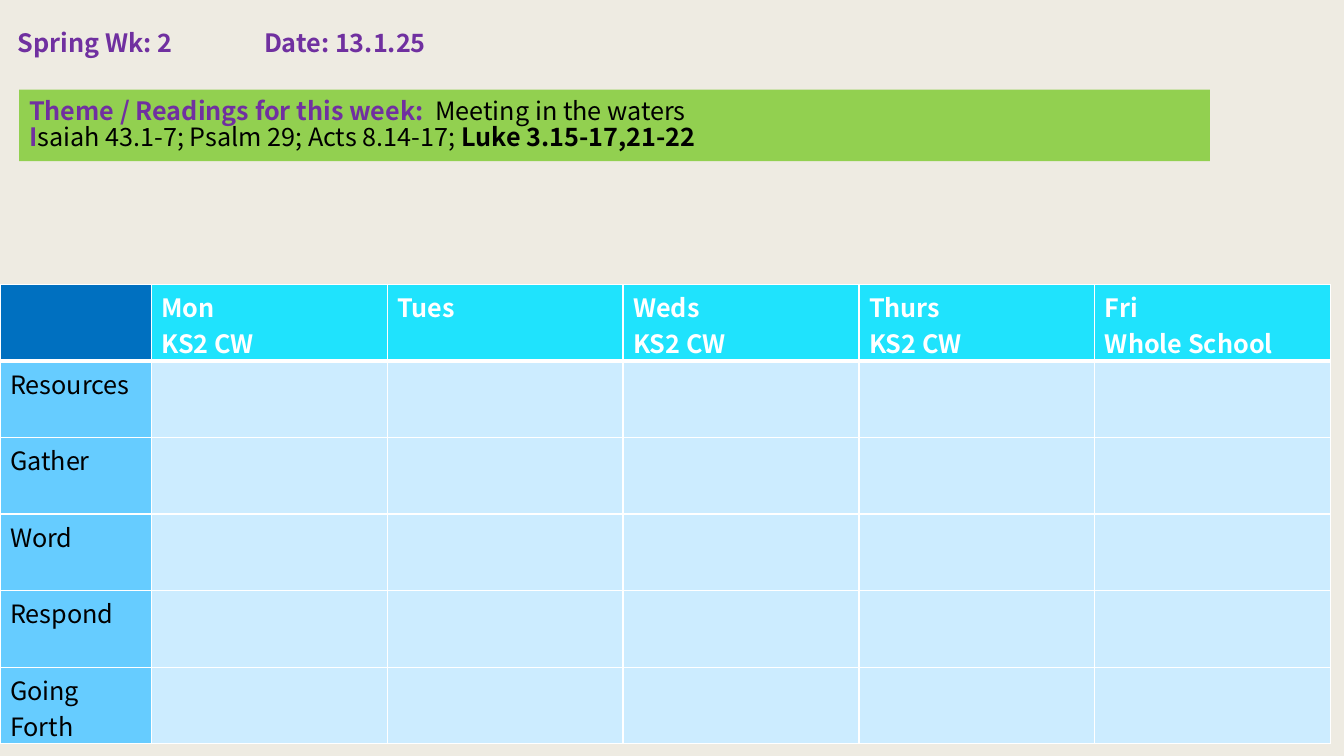
import dataclasses
import typing

import lxml.etree
import pptx
import pptx.dml.color
import pptx.enum.shapes
import pptx.enum.text
import pptx.oxml.ns
import pptx.util

COLOURS = {
    "background": "EEEBE2", "purple": "7030A0", "black": "000000", "white": "FFFFFF",
    "theme": "92D050", "corner": "0070C0", "day": "1FE3FD",
    "stage": "66CCFF", "blank": "CCECFF",
}
FONT = "Noto Sans CJK JP"
SLIDE_WIDTH, SLIDE_HEIGHT = pptx.util.Inches(13.33), pptx.util.Inches(7.5)
GRID_COLUMNS, GRID_ROWS = 1333, 750
LINE_SPACING = 0.85

DAYS = ["Mon\nKS2 CW", "Tues", "Weds\nKS2 CW", "Thurs\nKS2 CW", "Fri\nWhole School"]
STAGES = ["Resources", "Gather", "Word", "Respond", "Going Forth"]
STAGE_COLUMNS, DAY_COLUMNS, TABLE_ROW = 150, 234, 76


@dataclasses.dataclass(frozen=True)
class Region:
    """A rectangle in grid columns and rows."""
    left: int
    top: int
    width: int
    height: int

    def box(self) -> tuple[int, int, int, int]:
        return (across(self.left), down(self.top), across(self.width), down(self.height))


@dataclasses.dataclass(frozen=True)
class Run:
    text: str
    colour: str = "black"
    bold: bool = False


@dataclasses.dataclass(frozen=True)
class Line:
    runs: list[Run]
    tab: int = 0


@dataclasses.dataclass(frozen=True)
class Banner:
    region: Region
    lines: list[Line]
    fill: str = ""


BANNERS = [
    Banner(Region(8, 27, 1298, 40),
           [Line([Run("Spring Wk: 2\tDate: 13.1.25", "purple", True)], tab=244)]),
    Banner(Region(19, 89, 1181, 71), [
        Line([Run("Theme / Readings for this week:\t", "purple", True),
              Run("Meeting in the waters")], tab=403),
        Line([Run("I", "purple", True),
              Run("saiah 43.1-7; Psalm 29; Acts 8.14-17; "),
              Run("Luke 3.15-17,21-22", bold=True)]),
    ], fill="theme"),
]
TABLE = Region(0, 282, STAGE_COLUMNS + DAY_COLUMNS * len(DAYS),
               TABLE_ROW * (len(STAGES) + 1))


def across(columns: int) -> int:
    return round(SLIDE_WIDTH * columns / GRID_COLUMNS)


def down(rows: int) -> int:
    return round(SLIDE_HEIGHT * rows / GRID_ROWS)


def rgb(name: str) -> pptx.dml.color.RGBColor:
    return pptx.dml.color.RGBColor.from_string(COLOURS[name])


def paint(fill: typing.Any, colour: str) -> None:
    fill.solid()
    fill.fore_color.rgb = rgb(colour)


def style_font(font: typing.Any, colour: str, bold: bool) -> None:
    font.name, font.size, font.bold = FONT, pptx.util.Pt(18), bold
    font.color.rgb = rgb(colour)


def add_child(parent: typing.Any, tag: str, **attributes: str) -> typing.Any:
    return lxml.etree.SubElement(parent, pptx.oxml.ns.qn(tag), attributes)


def write_line(paragraph: typing.Any, line: Line) -> None:
    if line.tab:
        tabs = add_child(paragraph._p.get_or_add_pPr(), "a:tabLst")
        add_child(tabs, "a:tab", pos=str(across(line.tab)), algn="l")
    paragraph.line_spacing = LINE_SPACING
    paragraph.alignment = pptx.enum.text.PP_ALIGN.LEFT
    for part in line.runs:
        run = paragraph.add_run()
        run.text = part.text
        style_font(run.font, part.colour, part.bold)


def draw_banner(slide: typing.Any, banner: Banner) -> None:
    if banner.fill:
        shape = slide.shapes.add_shape(
            pptx.enum.shapes.MSO_SHAPE.RECTANGLE, *banner.region.box())
        shape.shadow.inherit = False
        paint(shape.fill, banner.fill)
        shape.line.fill.background()
    else:
        shape = slide.shapes.add_textbox(*banner.region.box())
    frame = shape.text_frame
    frame.word_wrap = True
    frame.auto_size = pptx.enum.text.MSO_AUTO_SIZE.SHAPE_TO_FIT_TEXT
    for index, line in enumerate(banner.lines):
        write_line(frame.add_paragraph() if index else frame.paragraphs[0], line)


def draw_cell(cell: typing.Any, text: str, fill: str, header: bool) -> None:
    cell.margin_top, cell.margin_bottom = pptx.util.Inches(0.04), 0
    properties = cell._tc.get_or_add_tcPr()
    for side in "LRTB":
        points = 3 if header and side == "B" else 1
        border = add_child(properties, f"a:ln{side}", w=str(pptx.util.Pt(points)))
        add_child(add_child(border, "a:solidFill"), "a:srgbClr", val=COLOURS["white"])
    paint(cell.fill, fill)
    cell.text_frame.text = text
    for paragraph in cell.text_frame.paragraphs:
        style_font(paragraph.font, "white" if header else "black", header)
        for run in paragraph.runs:
            style_font(run.font, "white" if header else "black", header)


def draw_timetable(slide: typing.Any) -> None:
    rows = [["", *DAYS]] + [[stage] + [""] * len(DAYS) for stage in STAGES]
    table = slide.shapes.add_table(len(rows), len(rows[0]), *TABLE.box()).table
    for index, column in enumerate(table.columns):
        column.width = across(DAY_COLUMNS if index else STAGE_COLUMNS)
    for row_index, texts in enumerate(rows):
        table.rows[row_index].height = down(TABLE_ROW)
        header = row_index == 0
        first_fill, other_fill = ("corner", "day") if header else ("stage", "blank")
        for column_index, text in enumerate(texts):
            fill = other_fill if column_index else first_fill
            draw_cell(table.cell(row_index, column_index), text, fill, header)


def main() -> None:
    presentation = pptx.Presentation()
    presentation.slide_width, presentation.slide_height = SLIDE_WIDTH, SLIDE_HEIGHT
    slide = presentation.slides.add_slide(presentation.slide_layouts[6])
    paint(slide.background.fill, "background")
    for banner in BANNERS:
        draw_banner(slide, banner)
    draw_timetable(slide)
    presentation.save("out.pptx")


if __name__ == "__main__":
    main()
